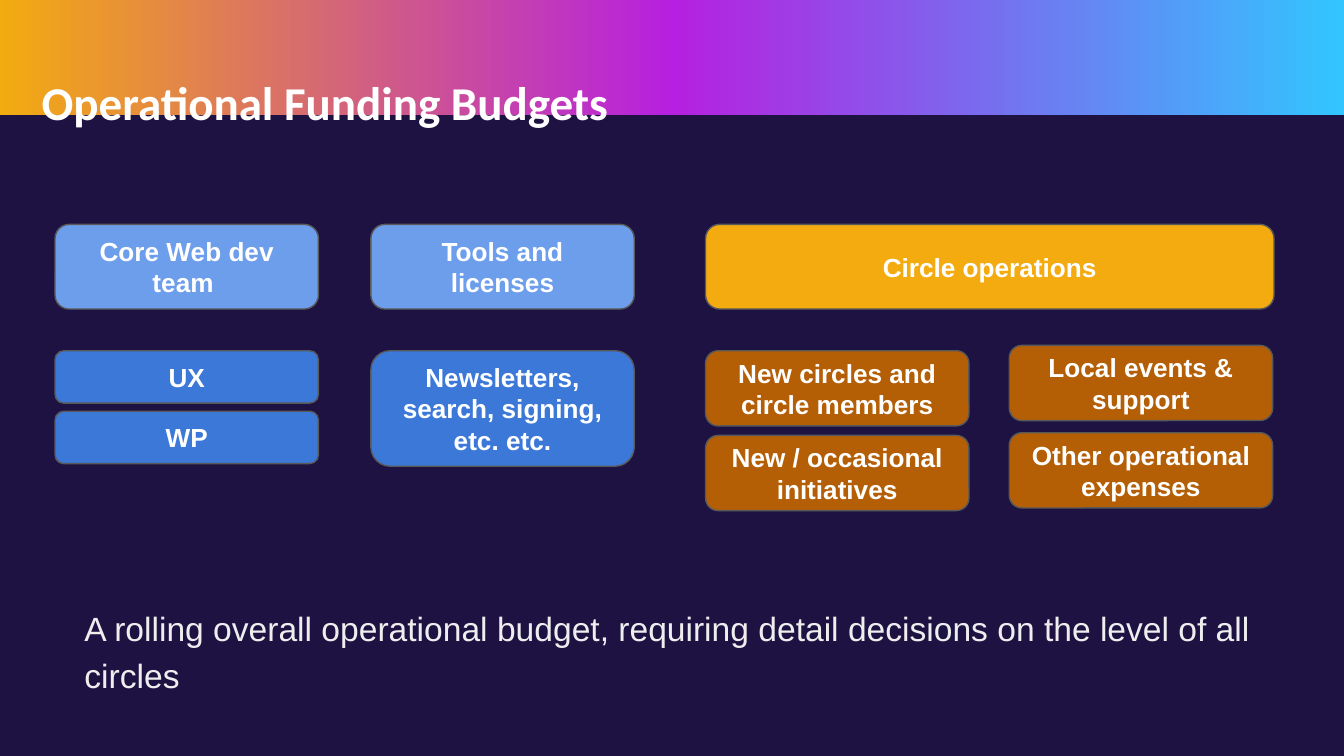
from copy import deepcopy
from dataclasses import dataclass

from pptx import Presentation
from pptx.dml.color import RGBColor
from pptx.enum.shapes import MSO_SHAPE
from pptx.enum.text import MSO_ANCHOR, MSO_AUTO_SIZE, PP_ALIGN
from pptx.oxml.ns import qn
from pptx.util import Inches, Pt

RECT, ROUND = MSO_SHAPE.RECTANGLE, MSO_SHAPE.ROUNDED_RECTANGLE
TOP, MIDDLE = MSO_ANCHOR.TOP, MSO_ANCHOR.MIDDLE
LEFT, CENTER = PP_ALIGN.LEFT, PP_ALIGN.CENTER
NO_FIT, GROW = MSO_AUTO_SIZE.NONE, MSO_AUTO_SIZE.SHAPE_TO_FIT_TEXT

NAVY, WHITE, PALE, GREY = "1E1243", "FFFFFF", "EEEEEE", "595959"
SKY, BLUE, GOLD, BROWN = "6D9EEB", "3C78D8", "F3AB10", "B45F06"
BAND = [(0, GOLD), (0.5, "B620E0"), (1, "32C5FF")]

# Column lefts, shared width, and tops of the two rows
TEAM, TOOLS, CIRCLE, EVENTS = 0.41, 2.76, 5.25, 7.51
WIDE = 1.96
HEAD, BODY = 1.67, 2.61


@dataclass
class Box:
    text: str
    left: float
    top: float
    height: float
    fill: str
    width: float = WIDE


BOXES = [
    Box("Core Web dev team ", TEAM, HEAD, 0.63, SKY),
    Box("Tools and licenses", TOOLS, HEAD, 0.63, SKY),
    Box("Circle operations", CIRCLE, HEAD, 0.63, GOLD, 4.23),
    Box("UX", TEAM, BODY, 0.39, BLUE),
    Box("WP", TEAM, 3.06, 0.39, BLUE),
    Box("Newsletters, search, signing, etc. etc.", TOOLS, BODY, 0.86, BLUE),
    Box("New circles and circle members", CIRCLE, BODY, 0.56, BROWN),
    Box("New / occasional initiatives", CIRCLE, 3.24, 0.56, BROWN),
    Box("Local events & support", EVENTS, 2.57, 0.56, BROWN),
    Box("Other operational expenses", EVENTS, 3.22, 0.56, BROWN),
]


def rgb(code: str) -> RGBColor:
    return RGBColor.from_string(code)


def write(shape, text: str, size: float, color: str, font: str = "Arial",
          bold: bool = True, align=LEFT, anchor=TOP, fit=NO_FIT):
    """Fill the shape with one styled paragraph and return the paragraph."""
    frame = shape.text_frame
    frame.word_wrap = True
    frame.auto_size = fit
    frame.vertical_anchor = anchor
    frame.margin_left = frame.margin_right = Inches(0.1)
    frame.margin_top = frame.margin_bottom = Inches(0.1)
    para = frame.paragraphs[0]
    para.alignment = align
    run = para.add_run()
    run.text = text
    run.font.name = font
    run.font.size = Pt(size)
    run.font.bold = bold
    run.font.color.rgb = rgb(color)
    return para


def add_band(slide):
    band = slide.shapes.add_shape(RECT, 0, 0, Inches(10), Inches(0.86))
    band.shadow.inherit = False
    band.line.fill.background()
    band.fill.gradient()
    band.fill.gradient_angle = 0
    first = band.element.find(".//" + qn("a:gs"))
    first.addnext(deepcopy(first))
    for stop, (place, color) in zip(band.fill.gradient_stops, BAND):
        stop.position = place
        stop.color.rgb = rgb(color)
    return band


def add_title(slide, band) -> None:
    title = slide.shapes.title
    title.left, title.top = Inches(0.21), Inches(0.24)
    title.width, title.height = Inches(9.32), Inches(0.63)
    para = write(title, "Operational Funding Budgets", 25.2, WHITE, "Calibri")
    para.line_spacing = 1.5
    band.element.addnext(title.element)  # keeps the title above the band


def add_box(slide, box: Box) -> None:
    shape = slide.shapes.add_shape(ROUND, Inches(box.left), Inches(box.top),
                                   Inches(box.width), Inches(box.height))
    shape.shadow.inherit = False
    shape.fill.solid()
    shape.fill.fore_color.rgb = rgb(box.fill)
    shape.line.color.rgb = rgb(GREY)
    shape.line.width = Pt(0.75)
    write(shape, box.text, 14, WHITE, align=CENTER, anchor=MIDDLE)


def add_note(slide) -> None:
    note = slide.shapes.add_textbox(Inches(0.53), Inches(4.38),
                                    Inches(8.95), Inches(0.85))
    para = write(note, "A rolling overall operational budget, requiring detail "
                 "decisions on the level of all circles", 18, PALE,
                 bold=False, fit=GROW)
    para.line_spacing = 1.15
    para.space_after = Pt(10)


def main() -> None:
    deck = Presentation()
    deck.slide_width = Inches(10)
    deck.slide_height = deck.slide_width * 9 // 16
    slide = deck.slides.add_slide(deck.slide_layouts[5])
    back = slide.background.fill
    back.solid()
    back.fore_color.rgb = rgb(NAVY)
    add_title(slide, add_band(slide))
    for box in BOXES:
        add_box(slide, box)
    add_note(slide)
    deck.save("out.pptx")


if __name__ == "__main__":
    main()
